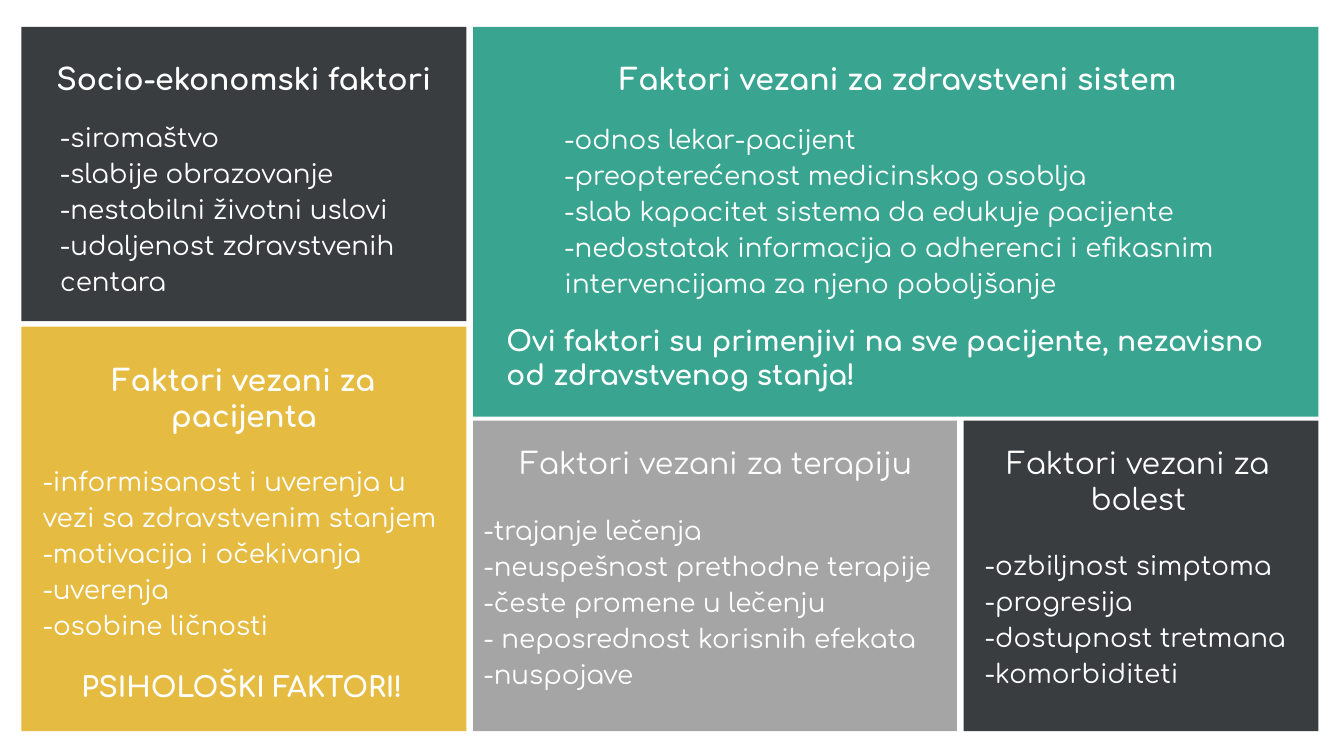
from lxml.etree import SubElement
from pptx import Presentation
from pptx.dml.color import RGBColor
from pptx.enum.shapes import MSO_SHAPE
from pptx.enum.text import MSO_ANCHOR, MSO_AUTO_SIZE, PP_ALIGN
from pptx.oxml.ns import qn
from pptx.util import Inches, Pt

DARK, GREEN, GREY, YELLOW = "3A3D40", "39A590", "A5A5A5", "E6BB41"


def color(value):
    return RGBColor.from_string(value)


class Board:
    font = "Comfortaa"
    ink = "FFFFFF"
    inset = Inches(0.1)

    def __init__(self, slide):
        self.s = slide
        self.panels = 0

    def place(self, sp, box):
        sp.left, sp.top, sp.width, sp.height = map(Inches, box)

    def panel(self, box, fill):
        """Add a filled rectangle behind all text."""
        sp = self.s.shapes.add_shape(MSO_SHAPE.RECTANGLE, *map(Inches, box))
        sp.shadow.inherit = False
        sp.fill.solid()
        sp.fill.fore_color.rgb = color(fill)
        sp.line.fill.background()
        tree = self.s.shapes.element
        tree.insert(2 + self.panels, sp.element)
        self.panels += 1

    def text(self, box, lines, size, bold=False, align=PP_ALIGN.LEFT,
             spacing=1.0, sp=None):
        """Write lines into the given placeholder, or into a new text box."""
        if sp is None:
            sp = self.s.shapes.add_textbox(*map(Inches, box))
        self.place(sp, box)
        tf = sp.text_frame
        tf.word_wrap = True
        tf.auto_size = MSO_AUTO_SIZE.SHAPE_TO_FIT_TEXT
        tf.vertical_anchor = MSO_ANCHOR.TOP
        tf.margin_left = tf.margin_right = self.inset
        tf.margin_top = tf.margin_bottom = self.inset
        for i, line in enumerate(lines):
            p = tf.add_paragraph() if i else tf.paragraphs[0]
            pPr = p._p.get_or_add_pPr()
            pPr.set("marL", "0")
            pPr.set("indent", "0")
            SubElement(pPr, qn("a:buNone"))
            p.alignment = align
            p.line_spacing = spacing
            p.space_before = Pt(0)
            r = p.add_run()
            r.text = line
            r.font.name = self.font
            r.font.size = Pt(size)
            r.font.bold = bold
            r.font.color.rgb = color(self.ink)

    def heading(self, box, line, bold=True, sp=None):
        self.text(box, [line], 16, bold, PP_ALIGN.CENTER, sp=sp)

    def factors(self, box, lines, sp=None):
        self.text(box, lines, 14, spacing=1.15, sp=sp)

    def remark(self, box, line, align=PP_ALIGN.LEFT):
        self.text(box, [line], 15, True, align)


def main():
    prs = Presentation()
    prs.slide_width = Inches(10)
    prs.slide_height = prs.slide_width * 9 // 16
    s = prs.slides.add_slide(prs.slide_layouts[1])
    board = Board(s)

    # Health system: the main panel holds the slide's title and body
    board.panel((3.52, 0.2, 6.29, 2.9), GREEN)
    board.heading((3.74, 0.35, 5.89, 0.47),
                  "Faktori vezani za zdravstveni sistem", sp=s.shapes.title)
    board.factors((4.1, 0.78, 5.2, 1.52), [
        "-odnos lekar-pacijent",
        "-preopterećenost medicinskog osoblja",
        "-slab kapacitet sistema da edukuje pacijente",
        "-nedostatak informacija o adherenci i efikasnim "
        "intervencijama za njeno poboljšanje",
    ], sp=s.placeholders[1])
    board.remark((3.67, 2.31, 6.05, 0.71),
                 "Ovi faktori su primenjivi na sve pacijente, nezavisno "
                 "od zdravstvenog stanja!")

    # Socio-economic
    board.panel((0.16, 0.2, 3.31, 2.19), DARK)
    board.heading((0.3, 0.35, 3.03, 0.47), "Socio-ekonomski faktori")
    board.factors((0.35, 0.77, 2.76, 1.52), [
        "-siromaštvo",
        "-slabije obrazovanje",
        "-nestabilni životni uslovi",
        "-udaljenost zdravstvenih centara",
    ])

    # Patient
    board.panel((0.16, 2.43, 3.31, 3.01), YELLOW)
    board.heading((0.3, 2.59, 3.03, 0.74), "Faktori vezani za pacijenta")
    board.factors((0.22, 3.33, 3.2, 1.52), [
        "-informisanost i uverenja u vezi sa zdravstvenim stanjem",
        "-motivacija i očekivanja",
        "-uverenja",
        "-osobine ličnosti",
    ])
    board.remark((0.42, 4.88, 2.76, 0.45), "PSIHOLOŠKI FAKTORI!",
                 PP_ALIGN.CENTER)

    # Therapy
    board.panel((3.52, 3.13, 3.6, 2.31), GREY)
    board.heading((3.64, 3.21, 3.38, 0.47), "Faktori vezani za terapiju",
                  bold=False)
    board.factors((3.5, 3.69, 3.6, 1.52), [
        "-trajanje lečenja",
        "-neuspešnost prethodne terapije",
        "-česte promene u lečenju",
        "- neposrednost korisnih efekata",
        "-nuspojave",
    ])

    # Disease
    board.panel((7.17, 3.13, 2.64, 2.31), DARK)
    board.heading((7.16, 3.21, 2.62, 0.74), "Faktori vezani za bolest",
                  bold=False)
    board.factors((7.23, 3.95, 2.49, 1.25), [
        "-ozbiljnost simptoma",
        "-progresija",
        "-dostupnost tretmana",
        "-komorbiditeti",
    ])

    prs.save("out.pptx")


if __name__ == "__main__":
    main()
